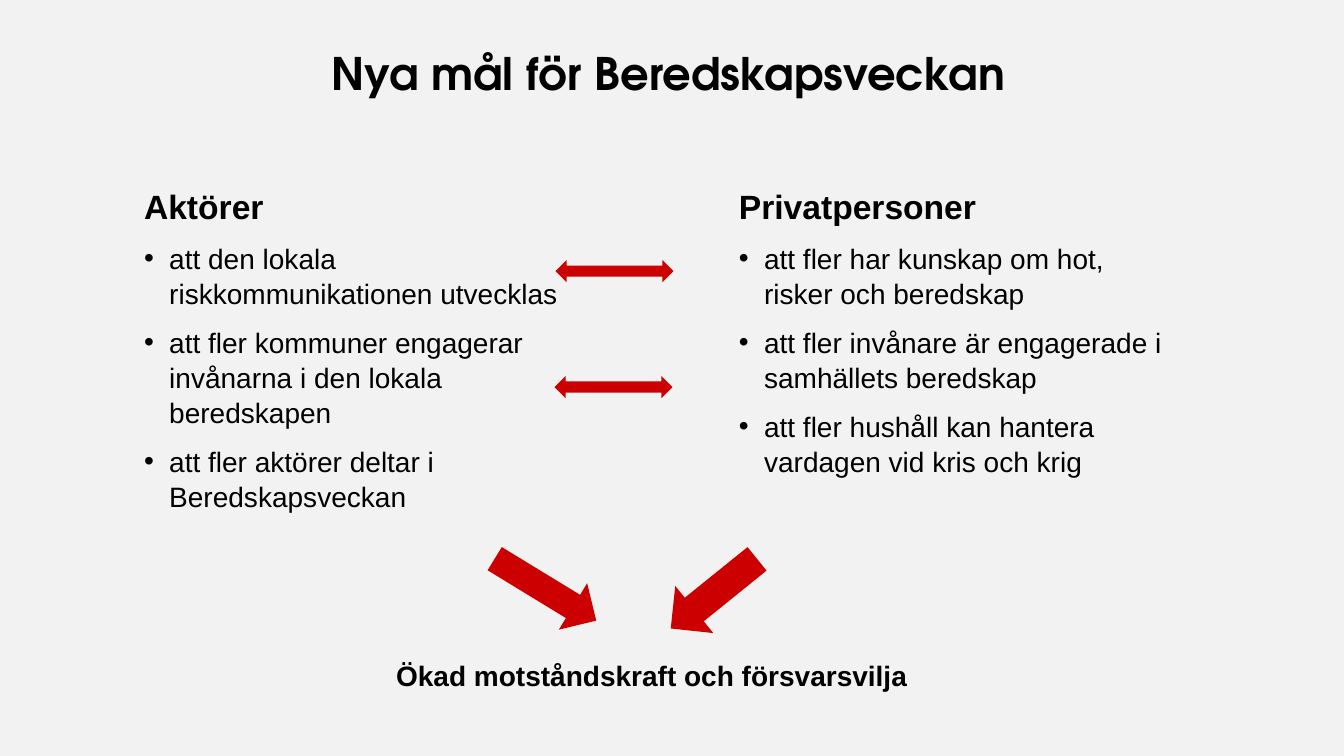
from lxml import etree
from pptx import Presentation, util as u
from pptx.dml.color import RGBColor
from pptx.enum import shapes, text
from pptx.oxml.ns import qn

WIDTH, HEIGHT = 13.33, 7.5
RED, BLACK, GREY = "CC0000", "000000", "F2F2F2"
BODY_TOP, COLUMN_WIDTH = 1.78, 4.52


def paint(fill, colour):
    fill.solid()
    fill.fore_color.rgb = RGBColor.from_string(colour)


def add_text(page, place, lines, name="Arial", align=text.PP_ALIGN.LEFT, spacing=1.0):
    """Add a text box; each line is (wording, size, bold, bulleted)."""
    frame = page.shapes.add_textbox(*map(u.Inches, place)).text_frame
    frame.word_wrap = True
    for index, (wording, size, bold, bulleted) in enumerate(lines):
        para = frame.paragraphs[0] if index == 0 else frame.add_paragraph()
        para.alignment, para.line_spacing = align, spacing
        if index:
            para.space_before = u.Pt(10)
        if bulleted:
            props = para._p.get_or_add_pPr()
            props.set("marL", str(u.Inches(0.25)))
            props.set("indent", str(-u.Inches(0.25)))
            etree.SubElement(props, qn("a:buFont")).set("typeface", "Arial")
            etree.SubElement(props, qn("a:buChar")).set("char", "•")
        para.text = wording
        for span in para.runs:
            for key, value in {"name": name, "size": u.Pt(size), "bold": bold}.items():
                setattr(span.font, key, value)
            paint(span.font.fill, BLACK)


deck = Presentation()
deck.slide_width, deck.slide_height = u.Inches(WIDTH), u.Inches(HEIGHT)
page = deck.slides.add_slide(deck.slide_layouts[6])
paint(page.background.fill, GREY)

add_text(page, (1.94, 0.46, 9.38, 1.06),
         [("Nya mål för Beredskapsveckan", 32, True, False)],
         "TeX Gyre Adventor", text.PP_ALIGN.CENTER, 0.9)

columns = [
    (1.33, 4.34, "Aktörer", [
        "att den lokala riskkommunikationen utvecklas",
        "att fler kommuner engagerar invånarna i den lokala beredskapen",
        "att fler aktörer deltar i\vBeredskapsveckan"]),
    (7.23, 4.46, "Privatpersoner", [
        "att fler har kunskap om hot, risker och beredskap",
        "att fler invånare är engagerade i samhällets beredskap",
        "att fler hushåll kan hantera vardagen vid kris och krig"]),
]
for left, height, heading, goals in columns:
    lines = [(heading, 24, True, False)] + [(goal, 20, False, True) for goal in goals]
    add_text(page, (left, BODY_TOP, COLUMN_WIDTH, height), lines, spacing=1.04)

add_text(page, (3.83, 6.48, 5.71, 0.44),
         [("Ökad motståndskraft och försvarsvilja", 20, True, False)])

ONE_WAY = shapes.MSO_SHAPE.RIGHT_ARROW
TWO_WAY = shapes.MSO_SHAPE.LEFT_RIGHT_ARROW
arrows = [
    (ONE_WAY, (4.82, 5.58, 1.18, 0.54), 31.4),
    (ONE_WAY, (6.53, 5.59, 1.1, 0.6), 141.1),
    (TWO_WAY, (5.51, 2.58, 1.17, 0.22), 0),
    (TWO_WAY, (5.5, 3.73, 1.17, 0.22), 0),
]
for kind, place, angle in arrows:
    arrow = page.shapes.add_shape(kind, *map(u.Inches, place))
    arrow.rotation = angle
    arrow.shadow.inherit = False
    paint(arrow.fill, RED)
    arrow.line.fill.background()

deck.save("out.pptx")
